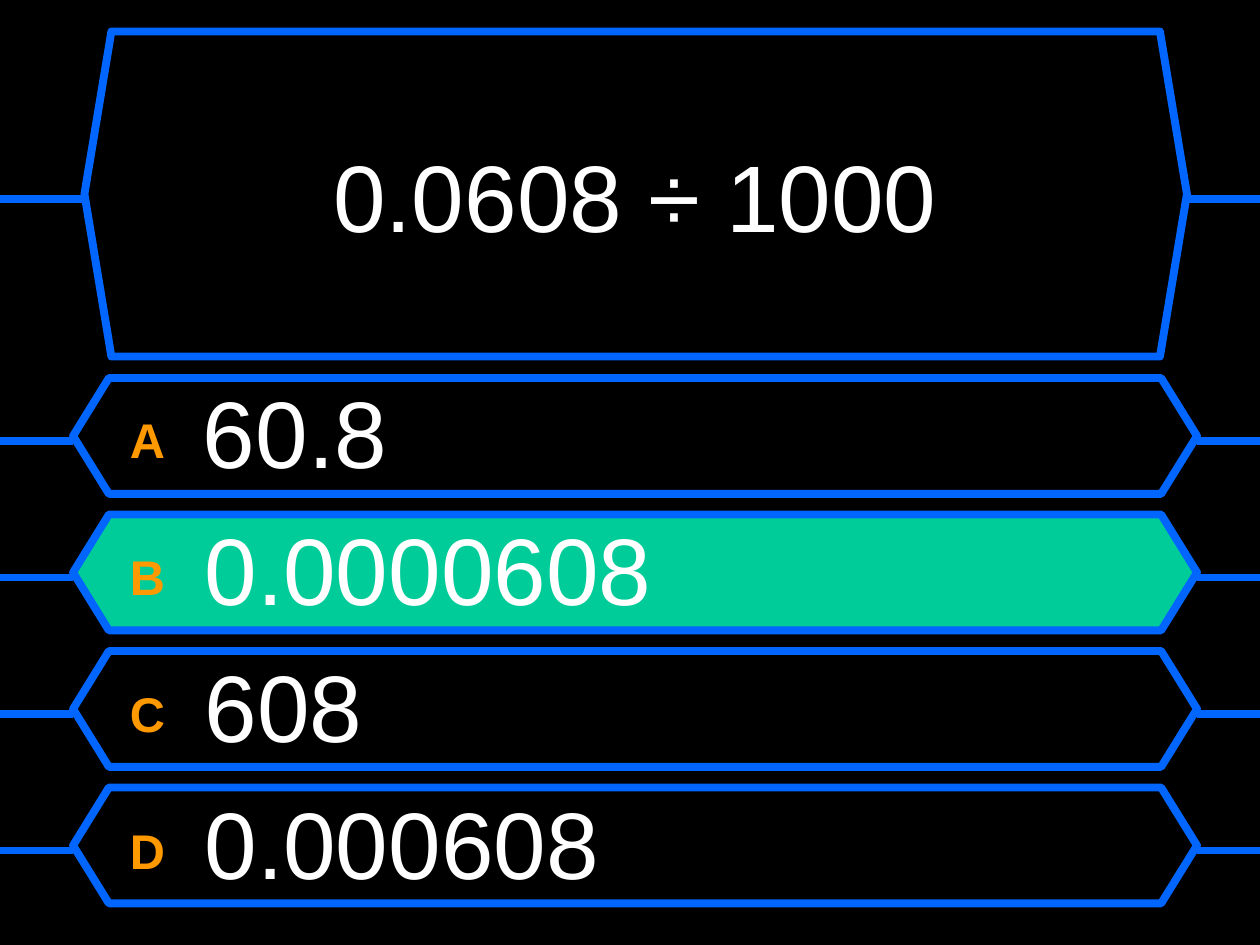
from lxml import etree
from pptx import Presentation
from pptx.dml.color import RGBColor
from pptx.enum.shapes import MSO_CONNECTOR, MSO_SHAPE
from pptx.enum.text import MSO_ANCHOR, MSO_AUTO_SIZE, PP_ALIGN
from pptx.oxml.ns import qn
from pptx.util import Inches, Pt

BLACK = RGBColor(0x00, 0x00, 0x00)
WHITE = RGBColor(0xFF, 0xFF, 0xFF)
BLUE = RGBColor(0x00, 0x66, 0xFF)
GREEN = RGBColor(0x00, 0xCC, 0x99)
ORANGE = RGBColor(0xFF, 0x99, 0x00)

ANSWERS = [("A", "60.8"), ("B", "0.0000608"), ("C", "608"), ("D", "0.000608")]
CORRECT = "B"
FIRST_TOP, ROW_STEP = 3, 3.25 / 3


def add_text(paragraph, text, size=54, color=WHITE, bold=False, baseline=0):
    run = paragraph.add_run()
    run.text = text
    run.font.name = "Arial"
    run.font.size = Pt(size)
    run.font.bold = bold
    run.font.color.rgb = color
    if baseline:
        run.font._element.set("baseline", str(baseline * 1000))


def add_panel(left, top, width, height, point, fill, wire_y):
    """Hexagon with a wire running from each tip to the slide edge."""
    panel = slide.shapes.add_shape(MSO_SHAPE.HEXAGON, Inches(left), Inches(top),
                                   Inches(width), Inches(height))
    panel.shadow.inherit = False
    panel.adjustments[0] = point
    panel.fill.solid()
    panel.fill.fore_color.rgb = fill
    panel.line.color.rgb = BLUE
    panel.line.width = Pt(4.5)
    for start, end in ((left, 0), (10, left + width)):
        wire = slide.shapes.add_connector(MSO_CONNECTOR.STRAIGHT, Inches(start), Inches(wire_y),
                                          Inches(end), Inches(wire_y))
        wire.line.color.rgb = BLUE
        wire.line.width = Pt(4.5)
        etree.SubElement(wire._element.spPr, qn("a:effectLst"))


prs = Presentation()
prs.slide_width, prs.slide_height = Inches(10), Inches(7.5)
slide = prs.slides.add_slide(prs.slide_layouts[1])
slide.background.fill.solid()
slide.background.fill.fore_color.rgb = BLACK
question, choices = slide.placeholders

# Question and answer panels
add_panel(0.67, 0.25, 8.75, 2.58, 0.083, BLACK, 1.58)
for row, (letter, _) in enumerate(ANSWERS):
    top = FIRST_TOP + row * ROW_STEP
    add_panel(0.58, top, 8.92, 0.92, 0.309,
              GREEN if letter == CORRECT else BLACK, top + 0.5)

# Place the text in front of the panels
for holder, box, anchor in (
    (question, (0.83, 0.42, 8.42, 2.25), MSO_ANCHOR.MIDDLE),
    (choices, (0.92, 2.92, 8.33, 4.33), MSO_ANCHOR.TOP),
):
    holder.left, holder.top, holder.width, holder.height = map(Inches, box)
    holder.text_frame.auto_size = MSO_AUTO_SIZE.NONE
    holder.text_frame.word_wrap = True
    holder.text_frame.vertical_anchor = anchor
    slide.shapes._spTree.append(holder._element)

# Question
question_line = question.text_frame.paragraphs[0]
question_line.alignment = PP_ALIGN.CENTER
add_text(question_line, "0.0608 ÷ 1000")

# Answers: raised letter, then the value
for row, (letter, value) in enumerate(ANSWERS):
    frame = choices.text_frame
    answer = frame.add_paragraph() if row else frame.paragraphs[0]
    answer.space_before = Pt(13.5 if row else 0)
    props = answer._p.get_or_add_pPr()
    props.set("marL", str(Inches(0.38)))
    props.set("indent", str(Inches(-0.37)))
    etree.SubElement(props, qn("a:buNone"))
    add_text(answer, letter + " ", size=48, color=ORANGE, bold=True, baseline=12)
    add_text(answer, " ", color=BLACK)
    add_text(answer, value)

prs.save("out.pptx")
